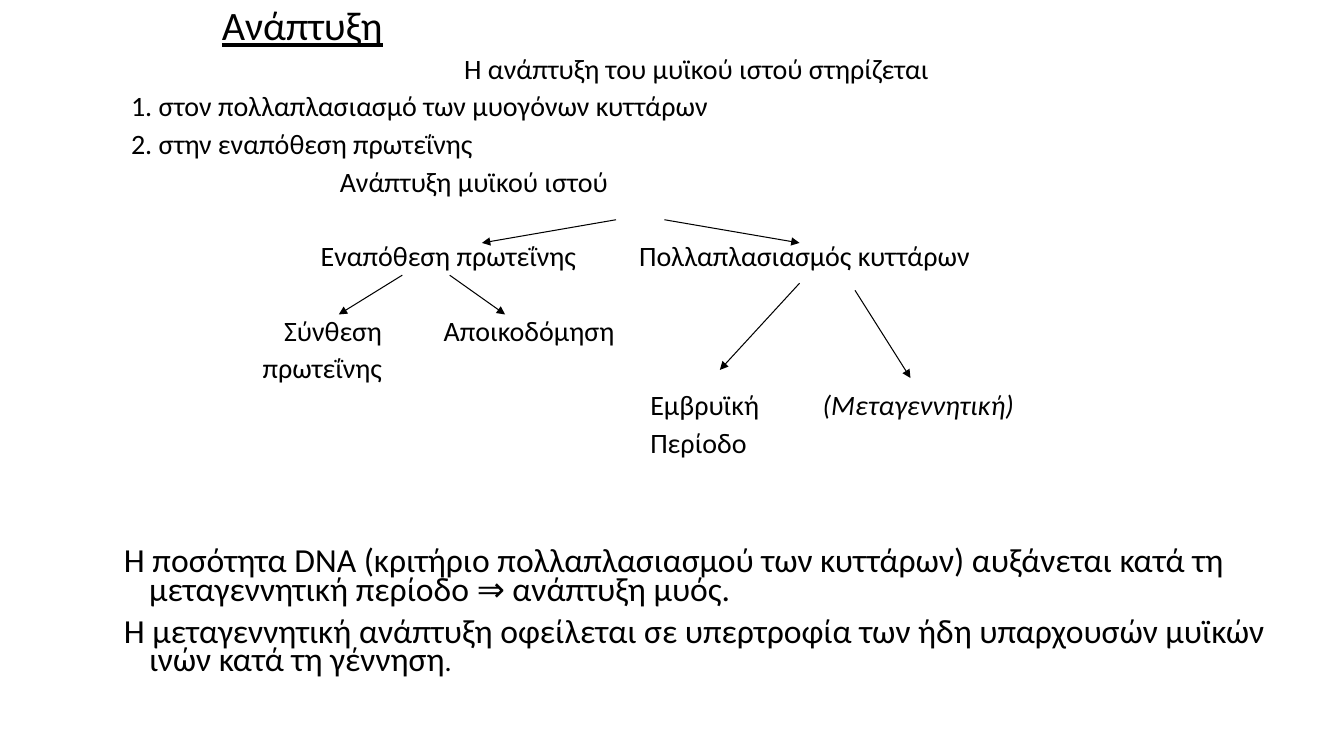
from lxml import etree
from pptx import Presentation
from pptx.dml.color import RGBColor
from pptx.enum.shapes import MSO_CONNECTOR
from pptx.enum.text import MSO_ANCHOR, MSO_AUTO_SIZE, PP_ALIGN
from pptx.oxml.ns import qn
from pptx.util import Inches, Pt

BLACK = RGBColor(0, 0, 0)
FONT = "Calibri"
LEFT, CENTER, RIGHT = PP_ALIGN.LEFT, PP_ALIGN.CENTER, PP_ALIGN.RIGHT
MIDDLE, TOP = MSO_ANCHOR.MIDDLE, MSO_ANCHOR.TOP
NO_AUTOFIT = MSO_AUTO_SIZE.NONE
STRAIGHT = MSO_CONNECTOR.STRAIGHT
ROW_PITCH = 0.37

TREE_LABELS = [
    (2.24, 0, 2.9, ["Ανάπτυξη μυϊκού ιστού"], LEFT, False),
    (2.05, 2, 2.8, ["Εναπόθεση πρωτεΐνης"], LEFT, False),
    (5.21, 2, 3.6, ["Πολλαπλασιασμός κυττάρων"], LEFT, False),
    (1.16, 4, 1.5, ["Σύνθεση", "πρωτεΐνης"], RIGHT, False),
    (3.27, 4, 2.0, ["Αποικοδόμηση"], LEFT, False),
    (5.32, 6, 1.4, ["Εμβρυϊκή", "Περίοδο"], LEFT, False),
    (7.03, 6, 2.3, ["(Μεταγεννητική)"], LEFT, True),
]
TREE_ARROWS = [
    (4.98, 0.46, 3.65, 0.69),
    (5.46, 0.46, 6.8, 0.69),
    (2.86, 1.01, 2.23, 1.4),
    (3.33, 1.01, 3.88, 1.4),
    (6.8, 1.09, 6.01, 1.95),
    (7.35, 1.16, 7.9, 2.03),
]


def add_run(paragraph, text, size, italic=False, underline=False):
    run = paragraph.add_run()
    run.text = text
    run.font.name = FONT
    run.font.size = Pt(size)
    run.font.color.rgb = BLACK
    run.font.italic = italic
    run.font.underline = underline


def add_text_frame(slide, left, top, width, height):
    shape = slide.shapes.add_textbox(Inches(left), Inches(top), Inches(width), Inches(height))
    frame = shape.text_frame
    frame.word_wrap = True
    frame.auto_size = NO_AUTOFIT
    frame.vertical_anchor = TOP
    frame.margin_left = frame.margin_right = frame.margin_top = frame.margin_bottom = 0
    return frame


def next_paragraph(frame, index, alignment=LEFT, margin=0, indent=0):
    paragraph = frame.add_paragraph() if index else frame.paragraphs[0]
    paragraph.alignment = alignment
    paragraph.line_spacing = 0.7
    paragraph.space_before = Pt(10 if index else 0)
    properties = paragraph._p.get_or_add_pPr()
    properties.set("marL", str(Inches(margin)))
    properties.set("indent", str(Inches(indent)))
    return paragraph


def add_arrow(slide, start_x, start_y, end_x, end_y):
    arrow = slide.shapes.add_connector(
        STRAIGHT, Inches(start_x), Inches(start_y), Inches(end_x), Inches(end_y))
    arrow.line.color.rgb = BLACK
    arrow.line.width = Pt(0.75)
    etree.SubElement(arrow.line._get_or_add_ln(), qn("a:tailEnd"), type="triangle")
    etree.SubElement(arrow._element.spPr, qn("a:effectLst"))


def place_title(slide, left, top, width, height):
    title = slide.shapes.title
    title.left, title.top = Inches(left), Inches(top)
    title.width, title.height = Inches(width), Inches(height)
    frame = title.text_frame
    frame.auto_size = NO_AUTOFIT
    frame.vertical_anchor = MIDDLE
    paragraph = frame.paragraphs[0]
    paragraph.alignment = LEFT
    paragraph.line_spacing = 0.9
    add_run(paragraph, "Ανάπτυξη", 28.8, underline=True)


def place_introduction(slide, left, top, width, height):
    frame = add_text_frame(slide, left, top, width, height)
    lines = [
        ("Η ανάπτυξη του μυϊκού ιστού στηρίζεται", CENTER, 0),
        ("1. στον πολλαπλασιασμό των μυογόνων κυττάρων", LEFT, 0.07),
        ("2. στην εναπόθεση πρωτεΐνης", LEFT, 0.07),
    ]
    for index, (text, alignment, margin) in enumerate(lines):
        add_run(next_paragraph(frame, index, alignment, margin), text, 20)


def place_growth_tree(slide, left, top):
    for x, row, width, lines, alignment, italic in TREE_LABELS:
        frame = add_text_frame(
            slide, left + x, top + row * ROW_PITCH, width, len(lines) * ROW_PITCH)
        for index, text in enumerate(lines):
            add_run(next_paragraph(frame, index, alignment), text, 20, italic)
    for start_x, start_y, end_x, end_y in TREE_ARROWS:
        add_arrow(slide, left + start_x, top + start_y, left + end_x, top + end_y)


def place_conclusions(slide, left, top, width, height):
    frame = add_text_frame(slide, left, top, width, height)
    conclusions = [
        [("Η ποσότητα DNA (κριτήριο πολλαπλασιασμού των κυττάρων) αυξάνεται "
          "κατά τη μεταγεννητική περίοδο ⇒ ανάπτυξη μυός.", 24)],
        [("Η μεταγεννητική ανάπτυξη οφείλεται σε υπερτροφία των ήδη "
          "υπαρχουσών μυϊκών ινών κατά τη γέννηση", 24), (".", 20)],
    ]
    for index, runs in enumerate(conclusions):
        paragraph = next_paragraph(frame, index, margin=0.25, indent=-0.25)
        for text, size in runs:
            add_run(paragraph, text, size)


def main():
    presentation = Presentation()
    presentation.slide_width = Inches(13.33)
    presentation.slide_height = Inches(7.5)
    slide = presentation.slides.add_slide(presentation.slide_layouts[5])
    place_title(slide, 2.1, 0, 9, 0.55)
    place_introduction(slide, 1.23, 0.6, 11.36, 1.05)
    place_growth_tree(slide, 1.13, 1.72)
    place_conclusions(slide, 1.23, 5.46, 11.36, 1.6)
    presentation.save("out.pptx")


if __name__ == "__main__":
    main()
